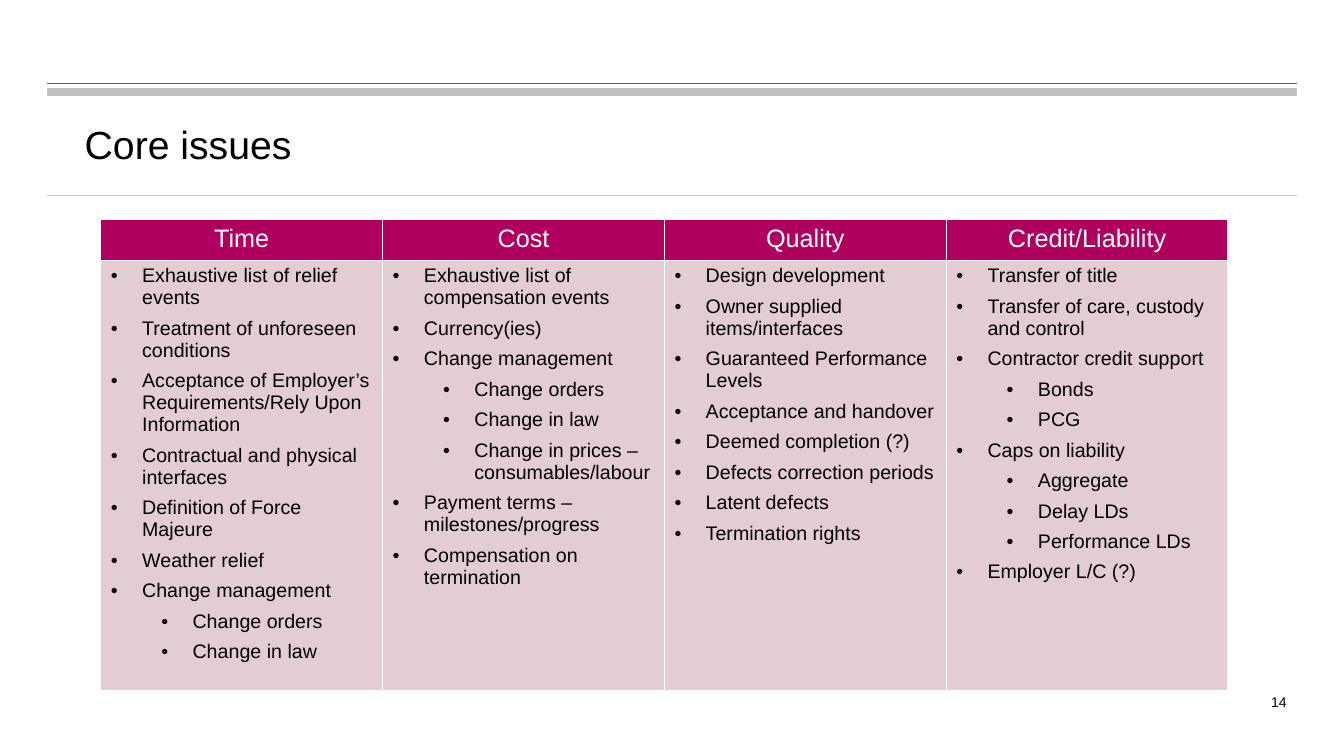
from dataclasses import dataclass

from lxml import etree
from pptx import Presentation
from pptx import util as u
from pptx.dml.color import RGBColor
from pptx.enum import shapes, text
from pptx.oxml import ns

Inches, Pt = u.Inches, u.Pt


@dataclass(frozen=True)
class Theme:
    font: str = "Arial"
    ink: str = "000000"
    white: str = "FFFFFF"
    header: str = "AF005F"
    body: str = "E3CCD2"
    dark_rule: str = "5F5F5F"
    rule: str = "C0C0C0"
    title_size: int = 28
    header_size: int = 18
    body_size: int = 14
    number_size: int = 10


THEME = Theme()

# Each issue: heading and its points, with sub-points as (level, text)
ISSUES = {
    "Time": [
        (0, "Exhaustive list of relief events"),
        (0, "Treatment of unforeseen conditions"),
        (0, "Acceptance of Employer’s Requirements/Rely Upon Information"),
        (0, "Contractual and physical interfaces"),
        (0, "Definition of Force Majeure"),
        (0, "Weather relief"),
        (0, "Change management"),
        (1, "Change orders"),
        (1, "Change in law"),
    ],
    "Cost": [
        (0, "Exhaustive list of compensation events"),
        (0, "Currency(ies)"),
        (0, "Change management"),
        (1, "Change orders"),
        (1, "Change in law"),
        (1, "Change in prices – consumables/labour"),
        (0, "Payment terms – milestones/progress"),
        (0, "Compensation on termination"),
    ],
    "Quality": [
        (0, "Design development"),
        (0, "Owner supplied items/interfaces"),
        (0, "Guaranteed Performance Levels"),
        (0, "Acceptance and handover"),
        (0, "Deemed completion (?)"),
        (0, "Defects correction periods"),
        (0, "Latent defects"),
        (0, "Termination rights"),
    ],
    "Credit/Liability": [
        (0, "Transfer of title"),
        (0, "Transfer of care, custody and control"),
        (0, "Contractor credit support"),
        (1, "Bonds"),
        (1, "PCG"),
        (0, "Caps on liability"),
        (1, "Aggregate"),
        (1, "Delay LDs"),
        (1, "Performance LDs"),
        (0, "Employer L/C (?)"),
    ],
}


def add_span(para, words, size, color=THEME.ink):
    span = para.add_run()
    span.text = words
    span.font.name = THEME.font
    span.font.size = Pt(size)
    span.font.color.rgb = RGBColor.from_string(color)


def place(shape, box):
    shape.left, shape.top, shape.width, shape.height = map(Inches, box)


def add_rules(page, left, right):
    """Horizontal rules above and below the title."""
    for y, color, weight in ((0.83, THEME.dark_rule, 0.5),
                             (0.91, THEME.rule, 6),
                             (1.94, THEME.rule, 0.5)):
        rule = page.shapes.add_connector(
            shapes.MSO_CONNECTOR.STRAIGHT,
            Inches(left), Inches(y), Inches(right), Inches(y))
        rule.line.color.rgb = RGBColor.from_string(color)
        rule.line.width = Pt(weight)
        etree.SubElement(rule._element.spPr, ns.qn("a:effectLst"))


def add_title(page, box, words):
    title = page.shapes.title
    place(title, box)
    frame = title.text_frame
    frame.word_wrap = True
    frame.auto_size = text.MSO_AUTO_SIZE.NONE
    frame.vertical_anchor = text.MSO_ANCHOR.MIDDLE
    frame.margin_left = Inches(0.39)
    para = frame.paragraphs[0]
    para.alignment = text.PP_ALIGN.LEFT
    add_span(para, words, THEME.title_size)


def add_page_number(page, box, number):
    frame = page.shapes.add_textbox(*map(Inches, box)).text_frame
    frame.word_wrap = True
    para = frame.paragraphs[0]
    para.alignment = text.PP_ALIGN.RIGHT
    add_span(para, number, THEME.number_size)


def style_cell(cell, fill):
    """White one-point borders and a solid fill."""
    props = cell._tc.get_or_add_tcPr()
    for side in ("lnL", "lnR", "lnT", "lnB"):
        line = etree.SubElement(props, ns.qn(f"a:{side}"), w=str(Pt(1)))
        solid = etree.SubElement(line, ns.qn("a:solidFill"))
        etree.SubElement(solid, ns.qn("a:srgbClr"), val=THEME.white)
    cell.fill.solid()
    cell.fill.fore_color.rgb = RGBColor.from_string(fill)


def add_bullet(para, level, words):
    props = para._p.get_or_add_pPr()
    props.set("marL", str(Inches(0.31 + 0.5 * level)))
    props.set("indent", str(Inches(-0.31)))
    etree.SubElement(props, ns.qn("a:buFont"), typeface=THEME.font)
    etree.SubElement(props, ns.qn("a:buChar"), char="•")
    para.level = level
    para.space_after = Pt(6)
    add_span(para, words, THEME.body_size)


def add_issue_table(page, box, issues, header_height):
    left, top, width, height = box
    frame = page.shapes.add_table(2, len(issues), *map(Inches, box))
    table = frame.table
    table.horz_banding = False
    table.rows[0].height = Inches(header_height)
    table.rows[1].height = Inches(height - header_height)
    for index, (heading, points) in enumerate(issues.items()):
        table.columns[index].width = Inches(width / len(issues))

        # Heading cell
        cell = table.cell(0, index)
        style_cell(cell, THEME.header)
        para = cell.text_frame.paragraphs[0]
        para.alignment = text.PP_ALIGN.CENTER
        add_span(para, heading, THEME.header_size, THEME.white)

        # Bulleted cell
        cell = table.cell(1, index)
        style_cell(cell, THEME.body)
        body = cell.text_frame
        for row, (level, words) in enumerate(points):
            para = body.add_paragraph() if row else body.paragraphs[0]
            add_bullet(para, level, words)


def main():
    deck = Presentation()
    deck.slide_width, deck.slide_height = Inches(13.33), Inches(7.5)
    page = deck.slides.add_slide(deck.slide_layouts.get_by_name("Title Only"))
    add_rules(page, 0.47, 12.86)
    add_page_number(page, (9.33, 6.83, 3.53, 0.52), "14")
    add_title(page, (0.45, 0.96, 12.38, 0.94), "Core issues")
    add_issue_table(page, (1, 2.18, 11.18, 4.42), ISSUES, 0.38)
    deck.save("out.pptx")


if __name__ == "__main__":
    main()
